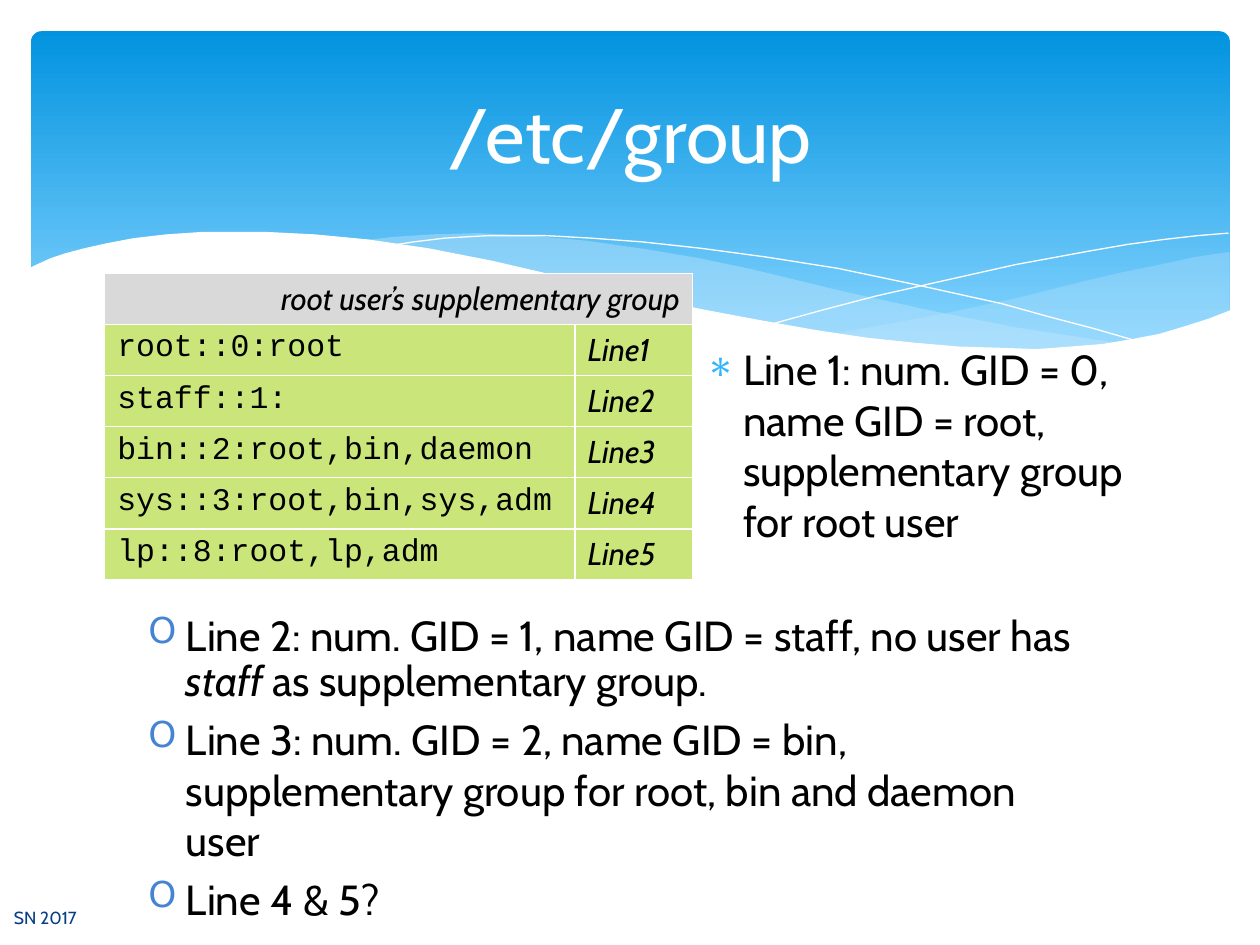
from lxml.etree import SubElement
from pptx import Presentation
from pptx.dml.color import RGBColor
from pptx.enum.shapes import MSO_SHAPE
from pptx.enum.text import MSO_ANCHOR, PP_ALIGN
from pptx.oxml.ns import qn
from pptx.util import Cm, Pt

COLORS = {
    "white": "FFFFFF", "black": "000000", "navy": "073E87",
    "sky_top": "0293E0", "sky_bottom": "83D3FE", "wave": "C6E7FC",
    "header": "D9D9D9", "lime": "CAE67B",
    "star": "31B6FD", "ring": "4584D3",
}
SANS, MONO = "Cabin", "Courier New"
WAVE_UNIT = Cm(0.0254)  # wave points are in hundredths of an inch

# Outlines of the banner's waves
RIGHT_WAVE = [
    (975, 200), (948, 204), (921, 210), (891, 216), (861, 223), (805, 237),
    (753, 248), (706, 257), (661, 265), (691, 269), (719, 272), (745, 275),
    (781, 277), (814, 278), (844, 277), (872, 274), (897, 270), (921, 265),
    (942, 259), (963, 252), (976, 247), (976, 200)]
MIDDLE_WAVE = [
    (893, 273), (866, 269), (807, 260), (741, 247), (668, 231), (598, 214),
    (555, 205), (514, 198), (465, 191), (420, 187), (380, 185), (344, 186),
    (313, 188), (286, 191), (323, 196), (362, 203), (404, 211), (449, 222),
    (530, 240), (601, 255), (650, 264), (695, 270), (736, 275), (773, 277),
    (807, 278), (838, 278), (867, 276), (893, 273)]
FALLING_LINE = [
    (309, 195), (328, 192), (353, 189), (387, 187), (433, 187), (469, 189),
    (510, 192), (556, 197), (608, 204), (665, 213), (727, 226), (795, 241),
    (831, 251), (869, 261), (907, 272)]
RISING_LINE = [
    (613, 257), (653, 246), (695, 235), (748, 223), (806, 210), (866, 199),
    (895, 194), (924, 190), (951, 187), (975, 185)]
WHITE_WAVE = [
    (977, 246), (959, 253), (940, 259), (920, 265), (899, 269), (875, 273),
    (850, 275), (823, 277), (793, 276), (761, 275), (726, 272), (688, 268),
    (648, 262), (603, 254), (555, 245), (503, 233), (447, 220), (391, 207),
    (340, 197), (292, 190), (250, 186), (211, 184), (161, 184), (132, 186),
    (106, 189), (85, 193), (67, 197), (52, 201), (40, 205), (29, 210),
    (23, 213), (23, 329), (977, 329)]

GROUP_LINES = ["root::0:root", "staff::1:", "bin::2:root,bin,daemon",
               "sys::3:root,bin,sys,adm", "lp::8:root,lp,adm"]


def color(name):
    return RGBColor.from_string(COLORS[name])


def add_para(frame, *spans, size=24, font=SANS, ink="black", italic=False,
             align=None, bullet=None, bullet_ink="ring", bullet_percent=None,
             line_spacing=None):
    """Write one paragraph; a span is a string, or (string, italic)."""
    first = frame.paragraphs[0]
    para = frame.add_paragraph() if first.runs else first
    para.alignment = align
    para.line_spacing = line_spacing
    for span in spans:
        text, slanted = span if isinstance(span, tuple) else (span, italic)
        run = para.add_run()
        run.text = text
        run.font.size, run.font.name = Pt(size), font
        run.font.italic = slanted
        run.font.color.rgb = color(ink)
    if bullet:
        para.space_before = Pt(size * 0.2)
        properties = para._p.get_or_add_pPr()
        properties.set("marL", str(Cm(0.76)))
        properties.set("indent", str(-Cm(0.76)))
        bullet_color = SubElement(properties, qn("a:buClr"))
        SubElement(bullet_color, qn("a:srgbClr"), val=COLORS[bullet_ink])
        if bullet_percent:
            SubElement(properties, qn("a:buSzPct"), val=str(bullet_percent * 1000))
        SubElement(properties, qn("a:buChar"), char=bullet)


def add_box(page, left, top, width, height, anchor=MSO_ANCHOR.TOP):
    box = page.shapes.add_textbox(Cm(left), Cm(top), Cm(width), Cm(height))
    frame = box.text_frame
    frame.word_wrap = True
    frame.vertical_anchor = anchor
    return frame


def add_wave(page, points, fill=None, opacity=None):
    """Draw a closed filled wave, or an open white hairline without a fill."""
    builder = page.shapes.build_freeform(*points[0], scale=WAVE_UNIT)
    builder.add_line_segments(points[1:], close=fill is not None)
    wave = builder.convert_to_shape()
    wave.shadow.inherit = False
    if fill is None:
        wave.fill.background()
        wave.line.color.rgb = color("white")
        wave.line.width = Pt(0)
        return
    wave.fill.solid()
    wave.fill.fore_color.rgb = color(fill)
    wave.line.fill.background()
    if opacity:
        tint = wave._element.spPr.find(qn("a:solidFill"))[0]
        SubElement(tint, qn("a:alpha"), val=str(opacity * 1000))


def add_banner(page):
    banner = page.shapes.add_shape(MSO_SHAPE.ROUNDED_RECTANGLE,
                                   Cm(0.63), Cm(0.63), Cm(24.16), Cm(6.86))
    banner.adjustments[0] = 0.03
    banner.shadow.inherit = False
    banner.line.fill.background()
    banner.fill.gradient()
    banner.fill.gradient_angle = 270
    stops = zip(banner.fill.gradient_stops, [(0, "sky_top"), (0.9, "sky_bottom")])
    for stop, (position, name) in stops:
        stop.position = position
        stop.color.rgb = color(name)
    add_wave(page, RIGHT_WAVE, "wave", 29)
    add_wave(page, MIDDLE_WAVE, "wave", 40)
    add_wave(page, FALLING_LINE)
    add_wave(page, RISING_LINE)
    add_wave(page, WHITE_WAVE, "white")


def fill_cell(cell, text, fill, **text_format):
    cell.fill.solid()
    cell.fill.fore_color.rgb = color(fill)
    add_para(cell.text_frame, text, size=18, **text_format)


def add_group_table(page):
    rows = len(GROUP_LINES) + 1
    table = page.shapes.add_table(rows, 2, Cm(2.11), Cm(5.51),
                                  Cm(11.85), Cm(1.03 * rows)).table
    table.columns[0].width, table.columns[1].width = Cm(9.48), Cm(2.37)
    table.cell(0, 0).merge(table.cell(0, 1))
    fill_cell(table.cell(0, 0), "root user’s supplementary group", "header",
              italic=True, align=PP_ALIGN.RIGHT)
    for number, entry in enumerate(GROUP_LINES, start=1):
        fill_cell(table.cell(number, 0), entry, "lime", font=MONO)
        fill_cell(table.cell(number, 1), f"Line{number}", "lime", italic=True)


def main():
    deck = Presentation()
    deck.slide_width, deck.slide_height = Cm(25.4), Cm(19.05)
    page = deck.slides.add_slide(deck.slide_layouts[6])

    # Banner and title
    add_banner(page)
    title = add_box(page, 1.27, 0.94, 22.86, 3.48, MSO_ANCHOR.MIDDLE)
    add_para(title, "/etc/group", size=44, ink="white", align=PP_ALIGN.CENTER)

    # Group file and the note beside it
    add_group_table(page)
    note = add_box(page, 13.97, 6.81, 10.11, 5.54)
    add_para(note, "Line 1: num. GID = 0, name GID = root, "
             "supplementary group for root user", bullet="∗", bullet_ink="star")

    # Remaining explanations
    notes = add_box(page, 2.74, 12.27, 19.48, 6.35)
    ring = {"bullet": "O", "bullet_percent": 85}
    add_para(notes, "Line 2: num. GID = 1, name GID = staff, no user has ",
             ("staff", True), " as supplementary group.", line_spacing=0.9, **ring)
    add_para(notes, "Line 3: num. GID = 2, name GID = bin, "
             "supplementary group for root, bin and daemon user", **ring)
    add_para(notes, "Line 4 & 5?", **ring)

    # Footer
    footer = add_box(page, 0.03, 17.98, 10.52, 1.02, MSO_ANCHOR.MIDDLE)
    add_para(footer, "SN 2017", size=10, ink="navy")

    deck.save("out.pptx")


if __name__ == "__main__":
    main()
